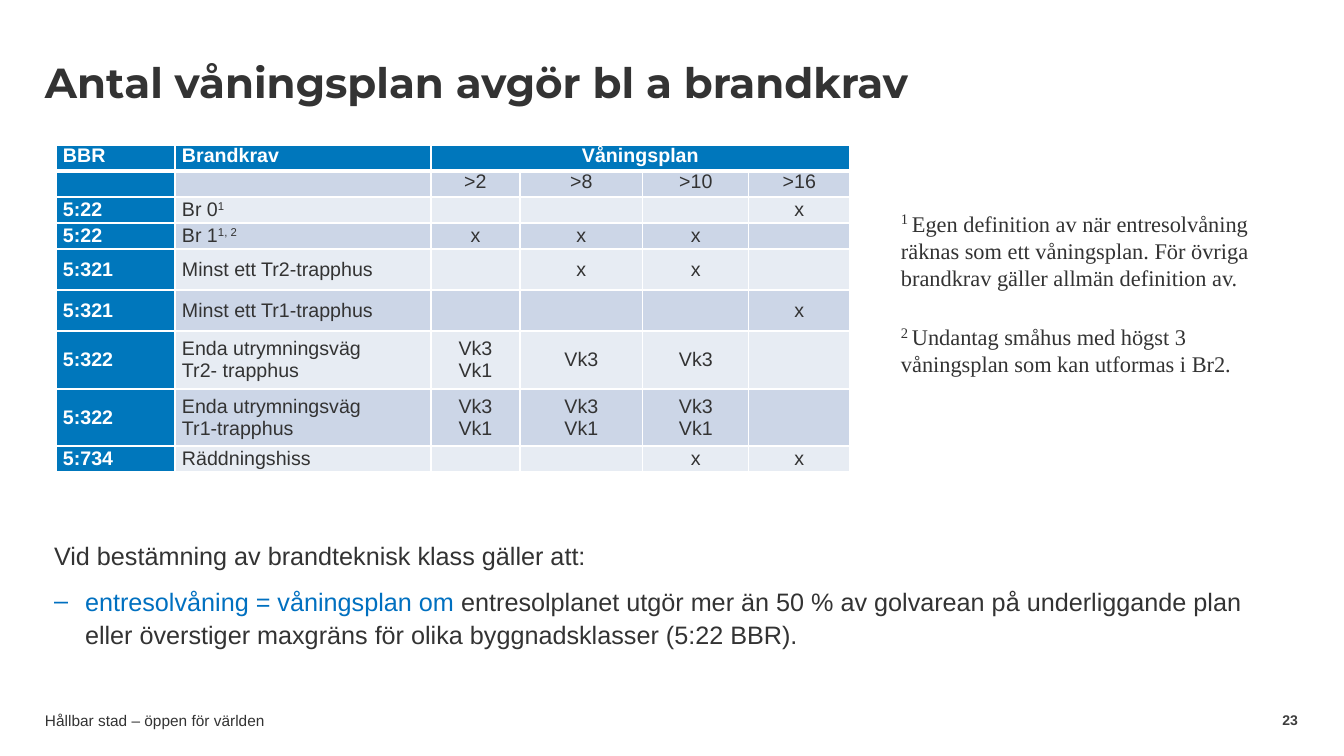
"""Build a slide on how the number of storeys governs fire requirements."""
from lxml import etree
from pptx import Presentation
from pptx.dml.color import RGBColor
from pptx.enum.text import MSO_ANCHOR, PP_ALIGN
from pptx.oxml.ns import qn
from pptx.util import Emu, Pt

TOP, MIDDLE = MSO_ANCHOR.TOP, MSO_ANCHOR.MIDDLE
LEFT, CENTER, RIGHT = PP_ALIGN.LEFT, PP_ALIGN.CENTER, PP_ALIGN.RIGHT

COLORS = {"ink": "333333", "number": "3D3D3D", "accent": "0070C0", "header": "0077BC",
          "band_dark": "CCD6E7", "band_light": "E7ECF3", "white": "FFFFFF"}
SANS, SERIF, DISPLAY = "Arial", "Times New Roman", "Montserrat"

TITLE = "Antal våningsplan avgör bl a brandkrav"
FOOTER = "Hållbar stad – öppen för världen"
PAGE_NUMBER = "23"
INTRO = "Vid bestämning av brandteknisk klass gäller att:"
RULE = [("entresolvåning = våningsplan om ", "accent"),
        ("entresolplanet utgör mer än 50 % av golvarean på underliggande plan "
         "eller överstiger maxgräns för olika byggnadsklasser (5:22 BBR).", "ink")]
FOOTNOTES = [
    ("1 ", "Egen definition av när entresolvåning räknas som ett våningsplan. "
           "För övriga brandkrav gäller allmän definition av."),
    ("2 ", "Undantag småhus med högst 3 våningsplan som kan utformas i Br2."),
]
REQUIREMENTS = [
    ("BBR", "Brandkrav", "Våningsplan", "", "", ""),
    ("", "", ">2", ">8", ">10", ">16"),
    ("5:22", "Br 0", "", "", "", "x"),
    ("5:22", "Br 1", "x", "x", "x", ""),
    ("5:321", "Minst ett Tr2-trapphus", "", "x", "x", ""),
    ("5:321", "Minst ett Tr1-trapphus", "", "", "", "x"),
    ("5:322", "Enda utrymningsväg\nTr2- trapphus", "Vk3\nVk1", "Vk3", "Vk3", ""),
    ("5:322", "Enda utrymningsväg\nTr1-trapphus", "Vk3\nVk1", "Vk3\nVk1", "Vk3\nVk1", ""),
    ("5:734", "Räddningshiss", "", "", "x", "x"),
]
NOTE_MARKS = {"Br 0": "1", "Br 1": "1, 2"}
COLUMN_WIDTHS = [119, 256, 89, 123, 106, 101]
ROW_HEIGHTS = [26, 26, 26, 26, 41, 41, 58, 57, 26]


def px(length):
    return Emu(round(length * 914400 / 100.8))


def color(name):
    return RGBColor.from_string(COLORS[name])


def add_text(paragraph, text, size, tint="ink", face=SANS, bold=False, raised=False):
    run = paragraph.add_run()
    run.text = text
    run.font.size, run.font.name, run.font.bold = Pt(size), face, bold
    run.font.color.rgb = color(tint)
    if raised:
        run.font._element.set("baseline", "30000")


def add_frame(slide, left, top, width, height, anchor=TOP, inset=(0, 0)):
    frame = slide.shapes.add_textbox(px(left), px(top), px(width), px(height)).text_frame
    frame.word_wrap, frame.vertical_anchor = True, anchor
    frame.margin_left = frame.margin_right = px(inset[0])
    frame.margin_top = frame.margin_bottom = px(inset[1])
    return frame


def add_border(cell, side, points):
    line = etree.SubElement(cell._tc.get_or_add_tcPr(), qn(f"a:ln{side}"), w=str(Pt(points)))
    fill = etree.SubElement(line, qn("a:solidFill"))
    etree.SubElement(fill, qn("a:srgbClr"), val=COLORS["white"])


def fill_cell(cell, text, row, column):
    heading = row == 0 or column == 0
    cell.margin_left = cell.margin_right = px(7)
    cell.margin_top = cell.margin_bottom = 0
    cell.vertical_anchor = TOP if row < 2 else MIDDLE
    for side in "LRTB":
        add_border(cell, side, 3 if (row, side) in ((0, "B"), (1, "T")) else 1)
    cell.fill.solid()
    cell.fill.fore_color.rgb = color(
        "header" if heading else "band_dark" if row % 2 else "band_light")
    for index, line in enumerate(text.split("\n")):
        frame = cell.text_frame
        paragraph = frame.add_paragraph() if index else frame.paragraphs[0]
        paragraph.alignment = CENTER if column > 1 else LEFT
        if line:
            add_text(paragraph, line, 14, "white" if heading else "ink", bold=heading)
        else:
            etree.SubElement(paragraph._p, qn("a:endParaRPr"), sz="1400")
        if line in NOTE_MARKS:
            add_text(paragraph, NOTE_MARKS[line], 14, raised=True)


def add_requirements(slide):
    table = slide.shapes.add_table(
        len(ROW_HEIGHTS), len(COLUMN_WIDTHS), px(56), px(145),
        px(sum(COLUMN_WIDTHS)), px(sum(ROW_HEIGHTS))).table
    for column, width in zip(table.columns, COLUMN_WIDTHS):
        column.width = px(width)
    for row, height in zip(table.rows, ROW_HEIGHTS):
        row.height = px(height)
    for row, texts in enumerate(REQUIREMENTS):
        for column, text in enumerate(texts):
            fill_cell(table.cell(row, column), text, row, column)
    table.cell(0, 2).merge(table.cell(0, 5))


def add_explanation(slide):
    frame = add_frame(slide, 54, 537, 1199, 120)
    intro, rule = frame.paragraphs[0], frame.add_paragraph()
    add_text(intro, INTRO, 18)
    properties = rule._p.get_or_add_pPr()
    properties.set("marL", str(px(31)))
    properties.set("indent", str(-px(31)))
    bullet_color = etree.SubElement(properties, qn("a:buClr"))
    etree.SubElement(bullet_color, qn("a:srgbClr"), val=COLORS["accent"])
    etree.SubElement(properties, qn("a:buFont"), typeface=SANS)
    etree.SubElement(properties, qn("a:buChar"), char="–")
    for text, tint in RULE:
        add_text(rule, text, 18, tint)
    intro.line_spacing = rule.line_spacing = 1.1
    rule.space_before = Pt(9)


def add_footnotes(slide):
    frame = add_frame(slide, 891, 202, 384, 176, inset=(10, 5))
    for index, (mark, text) in enumerate(FOOTNOTES):
        paragraph = frame.add_paragraph() if index else frame.paragraphs[0]
        if index:
            paragraph.space_before = Pt(21)
        add_text(paragraph, mark, 18, face=SERIF, raised=True)
        add_text(paragraph, text, 16, face=SERIF)


def main():
    deck = Presentation()
    deck.slide_width, deck.slide_height = px(1344), px(756)
    slide = deck.slides.add_slide(deck.slide_layouts[6])

    footer = add_frame(slide, 45, 712, 953, 16, MIDDLE).paragraphs[0]
    add_text(footer, FOOTER, 11)
    title = add_frame(slide, 45, 44, 1011, 82, MIDDLE, (0, 5)).paragraphs[0]
    title.line_spacing = 0.9
    add_text(title, TITLE, 30, face=DISPLAY, bold=True)
    number = add_frame(slide, 1228, 712, 70, 16, MIDDLE).paragraphs[0]
    number.alignment = RIGHT
    add_text(number, PAGE_NUMBER, 10, "number", bold=True)

    add_explanation(slide)
    add_requirements(slide)
    add_footnotes(slide)
    deck.save("out.pptx")


if __name__ == "__main__":
    main()
